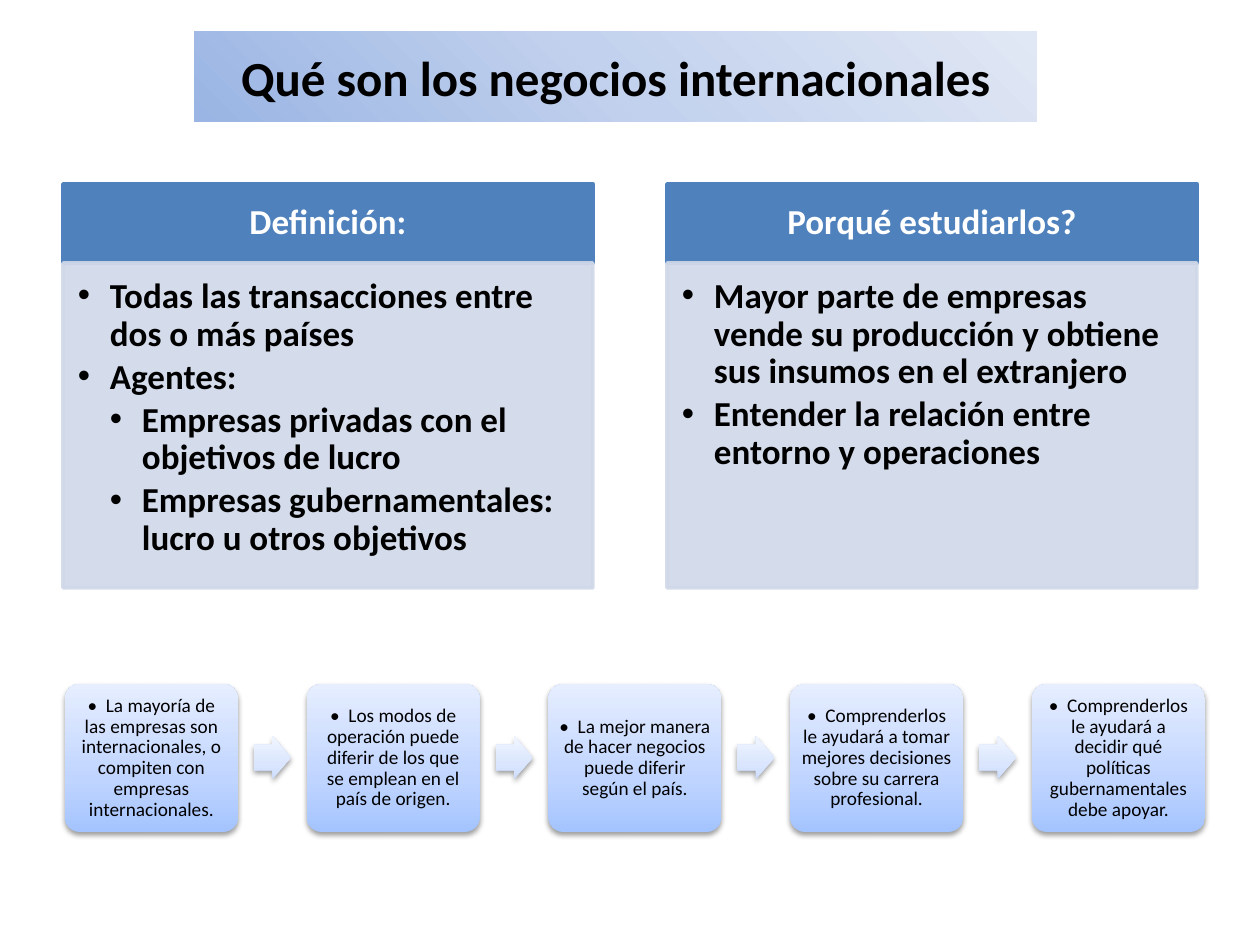
"""Build a slide on international business: two panels above a row of five steps."""
import pptx
import pptx.util
import pptx.oxml
import pptx.oxml.ns
import pptx.dml.color
import pptx.enum.shapes
import pptx.enum.text

TITLE = "Qué son los negocios internacionales"
PANELS = [
    ("Definición:", [
        (0, "Todas las transacciones entre dos o más países"),
        (0, "Agentes:"),
        (1, "Empresas privadas con el objetivos de lucro"),
        (1, "Empresas gubernamentales: lucro u otros objetivos"),
    ]),
    ("Porqué estudiarlos?", [
        (0, "Mayor parte de empresas vende su producción y obtiene sus insumos en el extranjero"),
        (0, "Entender la relación entre entorno y operaciones"),
    ]),
]
STEPS = [
    "La mayoría de las empresas son internacionales, o compiten con empresas internacionales.",
    "Los modos de operación puede diferir de los que se emplean en el país de origen.",
    "La mejor manera de hacer negocios puede diferir según el país.",
    "Comprenderlos le ayudará a tomar mejores decisiones sobre su carrera profesional.",
    "Comprenderlos le ayudará a decidir qué políticas gubernamentales debe apoyar.",
]
TITLE_GRAD = [(0, "9AB5E4"), (50, "C2D1ED"), (100, "E1E8F5")]
STEP_GRAD = [(0, "A4C4FF"), (35, "BFD4FF"), (100, "E6EEFF")]
ARROW_GRAD = [(0, "CDDDFE"), (35, "DBE6FE"), (100, "F0F5FF")]
BLUE, PALE, BLACK, WHITE = "4F81BD", "D0D8E8", "000000", "FFFFFF"

KIND = pptx.enum.shapes.MSO_SHAPE
ALIGN = pptx.enum.text.PP_ALIGN
ANCHOR = pptx.enum.text.MSO_ANCHOR
NS = pptx.oxml.ns.nsdecls("a")
INDENT = 32


def px(n):
    return pptx.util.Emu(round(n * 914400 / 126))


def rgb(code):
    return pptx.dml.color.RGBColor.from_string(code)


def xml(text):
    return pptx.oxml.parse_xml(text.replace(">", f" {NS}>", 1))


def add(kind, left, top, width, height):
    shape = slide.shapes.add_shape(kind, px(left), px(top), px(width), px(height))
    shape.shadow.inherit = False
    shape.line.fill.background()
    return shape


def shade(shape, stops, angle):
    shape.fill.background()
    old = shape.element.spPr.find(pptx.oxml.ns.qn("a:noFill"))
    marks = "".join(
        f'<a:gs pos="{pos * 1000}"><a:srgbClr val="{code}"/></a:gs>' for pos, code in stops)
    new = xml(f'<a:gradFill><a:gsLst>{marks}</a:gsLst><a:lin ang="{angle * 60000}" scaled="0"/></a:gradFill>')
    shape.element.spPr.replace(old, new)


def cast(shape):
    effects = shape.element.spPr.find(pptx.oxml.ns.qn("a:effectLst"))
    effects.append(xml(
        '<a:outerShdw blurRad="40000" dist="20000" dir="5400000" rotWithShape="0">'
        '<a:srgbClr val="000000"><a:alpha val="38000"/></a:srgbClr></a:outerShdw>'))


def paint(shape, code, alpha=100):
    shape.fill.solid()
    shape.fill.fore_color.rgb = rgb(code)
    shape.line.color.rgb = rgb(code)
    shape.line.width = pptx.util.Pt(2)
    if alpha < 100:
        for tint in shape.element.spPr.iter(pptx.oxml.ns.qn("a:srgbClr")):
            tint.append(xml(f'<a:alpha val="{alpha * 1000}"/>'.replace("/>", "></a:alpha>")))


def write(shape, texts, size, code, bold, insets, align=ALIGN.CENTER, anchor=ANCHOR.MIDDLE):
    frame = shape.text_frame
    frame.word_wrap = True
    frame.vertical_anchor = anchor
    (frame.margin_left, frame.margin_top,
     frame.margin_right, frame.margin_bottom) = map(px, insets)
    frame.text = "\n".join(texts)
    for para in frame.paragraphs:
        para.alignment = align
        para.line_spacing = 0.9
        style(para, size, code, bold)
    return frame.paragraphs


def style(para, size, code, bold):
    for run in para.runs:
        run.font.name = "Calibri"
        run.font.size = pptx.util.Pt(size)
        run.font.bold = bold
        run.font.color.rgb = rgb(code)


def bullet(para, level):
    para.level = level
    para.space_after = pptx.util.Pt(3)
    props = para._p.get_or_add_pPr()
    props.set("marL", str(px(INDENT * (level + 1))))
    props.set("indent", str(px(-INDENT)))
    props.append(xml('<a:buFont typeface="Arial"></a:buFont>'))
    props.append(xml('<a:buChar char="•"></a:buChar>'))


def panel(left, head, items):
    bar = add(KIND.RECTANGLE, left, 184, 530, 79)
    paint(bar, BLUE)
    write(bar, [head], 20, WHITE, True, (20, 11, 20, 11))
    box = add(KIND.RECTANGLE, left, 263, 530, 325)
    paint(box, PALE, 90)
    paras = write(box, [text for _, text in items], 20, BLACK, True,
                  (15, 15, 20, 21), ALIGN.LEFT, ANCHOR.TOP)
    for para, (level, _) in zip(paras, items):
        bullet(para, level)


def step(left, text):
    box = add(KIND.ROUNDED_RECTANGLE, left, 684, 173, 148)
    box.adjustments[0] = 0.1
    shade(box, STEP_GRAD, 270)
    cast(box)
    write(box, ["•  " + text], 11, BLACK, False, (6, 6, 6, 6))


def arrow(left):
    shape = add(KIND.RIGHT_ARROW, left, 736, 37, 43)
    shape.adjustments[0] = 0.6
    shade(shape, ARROW_GRAD, 270)
    cast(shape)


deck = pptx.Presentation()
deck.slide_width, deck.slide_height = px(1260), px(945)
slide = deck.slides.add_slide(deck.slide_layouts[5])

title = slide.shapes.title
title.left, title.top, title.width, title.height = map(px, (194, 31, 843, 91))
shade(title, TITLE_GRAD, 315)
title.text_frame.text = TITLE
title.text_frame.vertical_anchor = ANCHOR.MIDDLE
title.text_frame.paragraphs[0].alignment = ALIGN.CENTER
style(title.text_frame.paragraphs[0], 28, BLACK, True)

for i, (head, items) in enumerate(PANELS):
    panel(63 + 604 * i, head, items)

pitch = (1032 - 65) / (len(STEPS) - 1)
for i, text in enumerate(STEPS):
    step(65 + pitch * i, text)
    if i < len(STEPS) - 1:
        arrow(254 + pitch * i)

deck.save("out.pptx")
